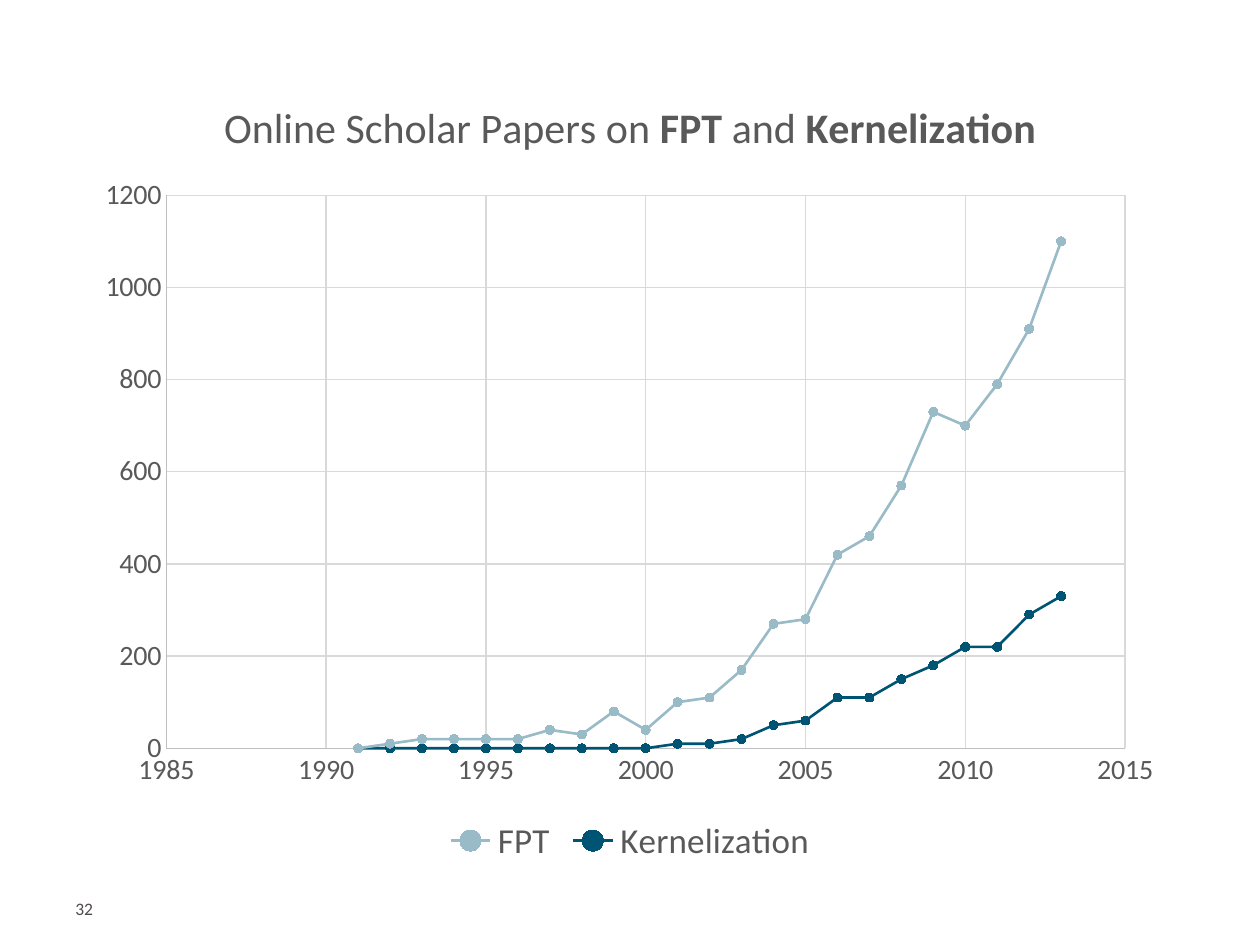
from dataclasses import dataclass
from lxml.etree import SubElement
from pptx import Presentation
from pptx.chart.data import XyChartData
from pptx.dml.color import RGBColor
from pptx.enum.chart import XL_CHART_TYPE, XL_LEGEND_POSITION, XL_MARKER_STYLE, XL_TICK_MARK
from pptx.oxml.ns import qn
from pptx.util import Inches, Pt


@dataclass(frozen=True)
class Theme:
    font: str = "Calibri"
    text: str = "595959"
    number: str = "4E4A48"
    axis: str = "BFBFBF"
    grid: str = "D9D9D9"
    series: tuple = ("99BBC7", "005473")
    title_size: int = 24
    legend_size: int = 20
    label_size: int = 16
    number_size: int = 10


THEME = Theme()
CHART_BOX = (0.67, 0.6, 8.66, 6.3)
PLOT_BOX = (1.32, 1.55, 7.61, 4.39)
NUMBER_BOX = (0.5, 7.13, 2.14, 0.3)
YEARS = range(1991, 2014)
PAPERS = {
    "FPT": (0, 10, 20, 20, 20, 20, 40, 30, 80, 40, 100, 110, 170, 270, 280,
            420, 460, 570, 730, 700, 790, 910, 1100),
    "Kernelization": (0, 0, 0, 0, 0, 0, 0, 0, 0, 0, 10, 10, 20, 50, 60,
                      110, 110, 150, 180, 220, 220, 290, 330),
}
TITLE = (("Online Scholar Papers on ", False), ("FPT", True),
         (" and ", False), ("Kernelization", True))


def set_font(font, size, color=THEME.text, bold=False):
    font.name = THEME.font
    font.size = Pt(size)
    font.bold = bold
    font.color.rgb = RGBColor.from_string(color)


def set_line(line, color, width=0.75):
    line.color.rgb = RGBColor.from_string(color)
    line.width = Pt(width)


def format_axis(axis, low, high, step):
    axis.minimum_scale, axis.maximum_scale, axis.major_unit = low, high, step
    axis.major_tick_mark = axis.minor_tick_mark = XL_TICK_MARK.NONE
    axis.has_major_gridlines = True
    set_line(axis.major_gridlines.format.line, THEME.grid)
    set_line(axis.format.line, THEME.axis)
    set_font(axis.tick_labels.font, THEME.label_size)
    axis.tick_labels.number_format = "General"
    axis.tick_labels.number_format_is_linked = False


def place_plot(chart, plot, box):
    left, top, width, height = box
    shares = ((plot[0] - left) / width, (plot[1] - top) / height,
              plot[2] / width, plot[3] / height)
    area = chart._chartSpace.chart.plotArea
    for old in area.findall(qn("c:layout")):
        area.remove(old)
    layout = SubElement(area, qn("c:layout"))
    area.insert(0, layout)
    manual = SubElement(layout, qn("c:manualLayout"))
    for tag, val in (("layoutTarget", "inner"), ("xMode", "edge"), ("yMode", "edge"),
                     *zip("xywh", shares)):
        SubElement(manual, qn(f"c:{tag}")).set("val", str(val))


def add_papers_chart(slide, box, plot):
    data = XyChartData()
    for name, counts in PAPERS.items():
        series = data.add_series(name)
        for year, count in zip(YEARS, counts):
            series.add_data_point(year, count)
    chart = slide.shapes.add_chart(XL_CHART_TYPE.XY_SCATTER_LINES, *map(Inches, box), data).chart
    chart.font.name = THEME.font

    chart.has_title = True
    p = chart.chart_title.text_frame.paragraphs[0]
    for text, bold in TITLE:
        r = p.add_run()
        r.text = text
        set_font(r.font, THEME.title_size, bold=bold)
    chart.chart_title.include_in_layout = False

    chart.has_legend = True
    chart.legend.position = XL_LEGEND_POSITION.BOTTOM
    chart.legend.include_in_layout = False
    set_font(chart.legend.font, THEME.legend_size)

    format_axis(chart.category_axis, 1985, 2015, 5)
    format_axis(chart.value_axis, 0, 1200, 200)
    place_plot(chart, plot, box)

    chart.plots[0].vary_by_categories = False
    for series, color in zip(chart.plots[0].series, THEME.series):
        series.smooth = False
        set_line(series.format.line, color, 1.5)
        marker = series.marker
        marker.style, marker.size = XL_MARKER_STYLE.CIRCLE, 5
        marker.format.fill.solid()
        marker.format.fill.fore_color.rgb = RGBColor.from_string(color)
        set_line(marker.format.line, color)


def add_slide_number(slide, box, number):
    tf = slide.shapes.add_textbox(*map(Inches, box)).text_frame
    tf.word_wrap = True
    tf.margin_top, tf.margin_bottom = 0, Inches(0.05)
    r = tf.paragraphs[0].add_run()
    r.text = number
    set_font(r.font, THEME.number_size, THEME.number)


def main():
    prs = Presentation()
    prs.slide_width, prs.slide_height = Inches(10), Inches(7.5)
    s = prs.slides.add_slide(prs.slide_layouts[6])
    add_papers_chart(s, CHART_BOX, PLOT_BOX)
    add_slide_number(s, NUMBER_BOX, "32")
    prs.save("out.pptx")


if __name__ == "__main__":
    main()
